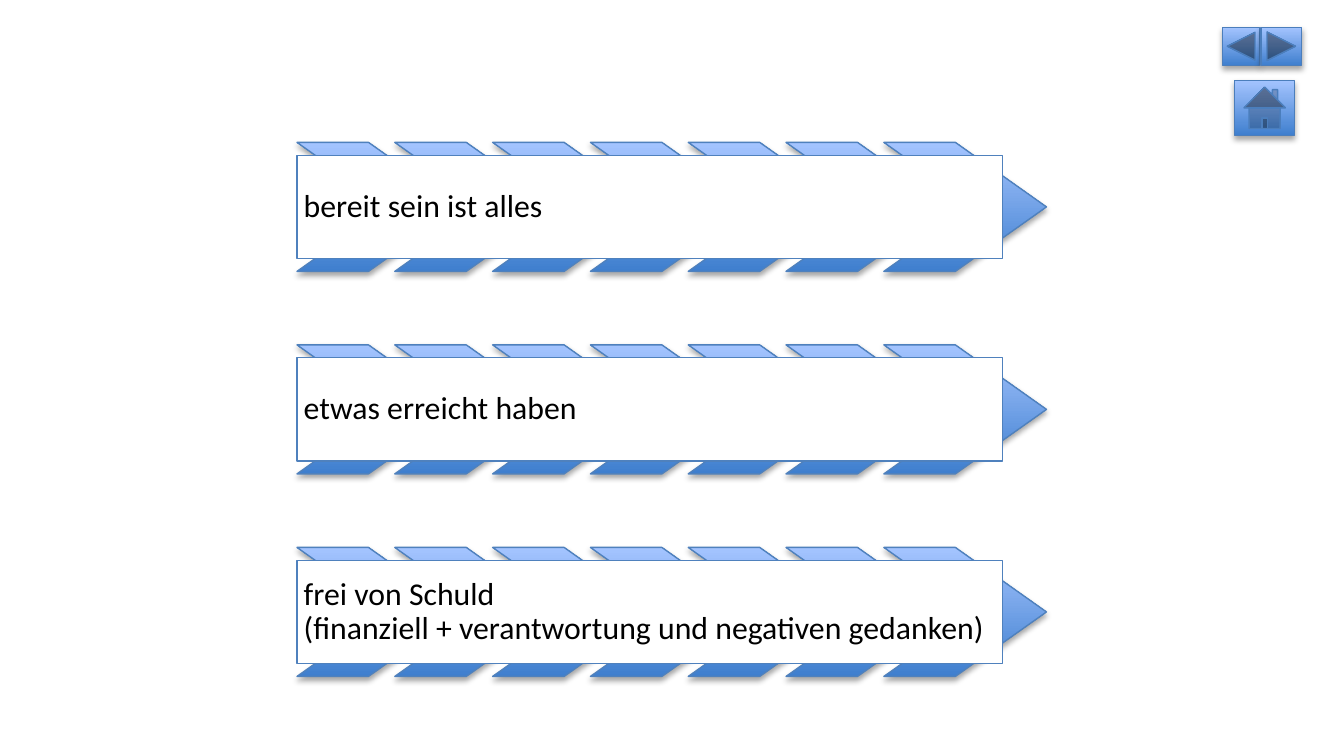
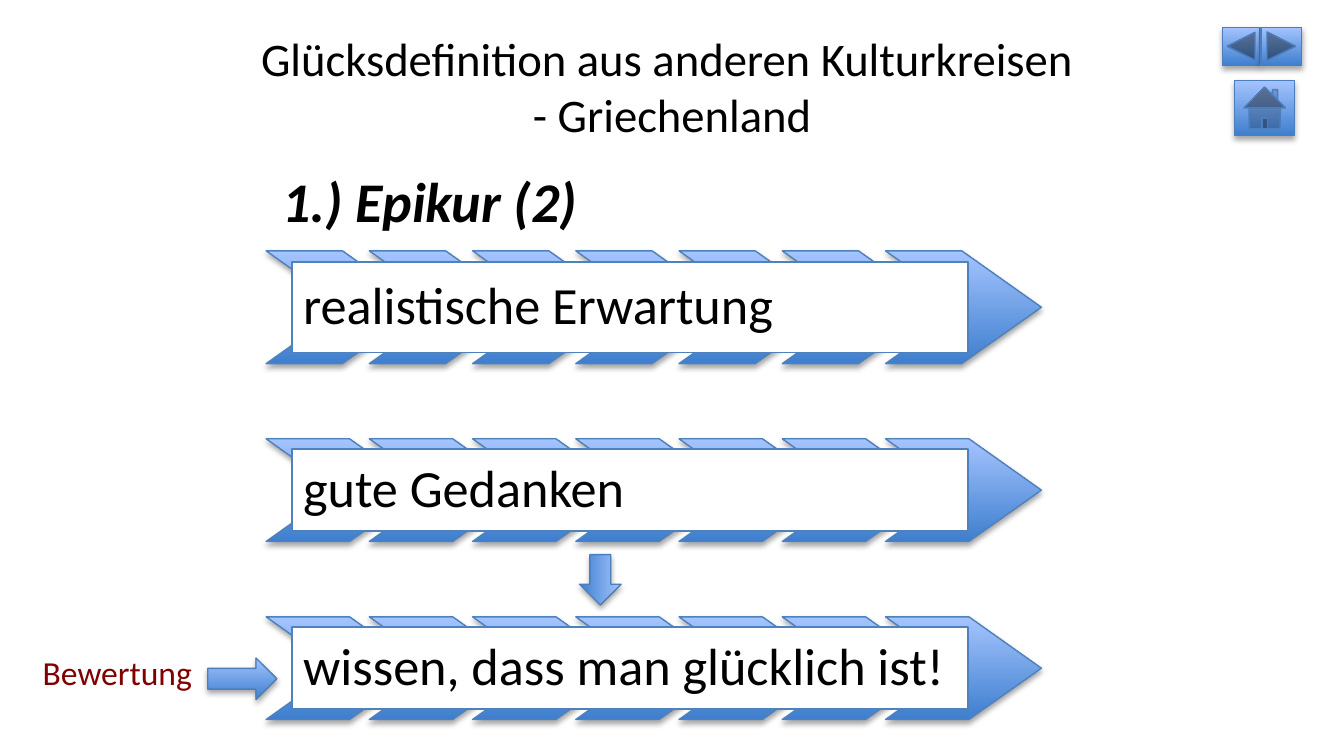
from dataclasses import dataclass

from lxml import etree
from pptx import Presentation
from pptx.dml.color import RGBColor
from pptx.enum.shapes import MSO_SHAPE
from pptx.enum.text import MSO_ANCHOR, MSO_AUTO_SIZE, PP_ALIGN
from pptx.oxml.ns import qn
from pptx.util import Pt

CHEVRON = MSO_SHAPE.CHEVRON
RECT = MSO_SHAPE.RECTANGLE
ARROW = MSO_SHAPE.RIGHT_ARROW
BACK = MSO_SHAPE.ACTION_BUTTON_BACK_OR_PREVIOUS
NEXT = MSO_SHAPE.ACTION_BUTTON_FORWARD_OR_NEXT
HOME = MSO_SHAPE.ACTION_BUTTON_HOME
MIDDLE, BOTTOM = MSO_ANCHOR.MIDDLE, MSO_ANCHOR.BOTTOM
LEFT, CENTER = PP_ALIGN.LEFT, PP_ALIGN.CENTER
NO_FIT, GROW = MSO_AUTO_SIZE.NONE, MSO_AUTO_SIZE.SHAPE_TO_FIT_TEXT

FONT = "Calibri"
COLORS = {
    "dark": "3F7FCE",
    "light": "A4C4FF",
    "edge": "4F81BD",
    "rim": "4B7EBC",
    "paper": "FFFFFF",
    "ink": "000000",
    "note": "800000",
}
COUNT = 7  # chevrons in a band
TITLE_ONLY, BLANK = 5, 6


@dataclass
class Box:
    x: float
    y: float
    w: float
    h: float

    def pts(self) -> tuple:
        return Pt(self.x), Pt(self.y), Pt(self.w), Pt(self.h)


@dataclass
class Icon:
    kind: int
    box: Box
    turn: float = 0


@dataclass
class Style:
    """Measures shared by the bands of one slide."""
    x: float
    step: float
    width: float
    box_x: float
    box_w: float
    size: float
    inset: float


@dataclass
class Band:
    text: str
    y: float
    h: float


def rgb(name: str) -> RGBColor:
    return RGBColor.from_string(COLORS[name])


def set_text(shape, text: str, size: float, color: str = "ink",
             align: int = LEFT, space: float = 1, bold: bool = False) -> None:
    """Put one paragraph in a shape and format it; bold text is also italic."""
    shape.text_frame.text = text
    para = shape.text_frame.paragraphs[0]
    para.alignment = align
    para.line_spacing = space
    for run in para.runs:
        run.font.name = FONT
        run.font.size = Pt(size)
        run.font.bold = run.font.italic = bold
        run.font.color.rgb = rgb(color)


def set_frame(shape, inset: float, anchor: int) -> None:
    frame = shape.text_frame
    frame.word_wrap = True
    frame.vertical_anchor = anchor
    frame.margin_left = frame.margin_right = Pt(inset)
    frame.margin_top = frame.margin_bottom = Pt(inset)


def add_form(slide, kind: int, box: Box, edge: str):
    shape = slide.shapes.add_shape(kind, *box.pts())
    shape.shadow.inherit = False
    shape.line.color.rgb = rgb(edge)
    shape.line.width = Pt(0.75)
    return shape


def add_glossy(slide, kind: int, box: Box, edge: str):
    """Draw a shape with the blue gradient and the soft shadow below it."""
    shape = add_form(slide, kind, box, edge)
    shape.fill.gradient()
    shape.fill.gradient_angle = 90
    for stop, name in zip(shape.fill.gradient_stops, ("dark", "light")):
        stop.color.rgb = rgb(name)
    effects = shape.element.spPr.find(qn("a:effectLst"))
    shadow = etree.SubElement(effects, qn("a:outerShdw"), blurRad=str(Pt(3.1)),
                              dist=str(Pt(1.8)), dir="5400000", rotWithShape="0")
    color = etree.SubElement(shadow, qn("a:srgbClr"), val=COLORS["ink"])
    etree.SubElement(color, qn("a:alpha"), val="35000")
    return shape


def add_icons(slide, icons: list[Icon]) -> None:
    for icon in icons:
        shape = add_glossy(slide, icon.kind, icon.box, "rim")
        shape.rotation = icon.turn


def add_band(slide, band: Band, style: Style) -> None:
    """Draw a row of chevrons with a white text box over its middle 80 %."""
    for i in range(COUNT):
        box = Box(style.x + i * style.step, band.y, style.width, band.h)
        add_glossy(slide, CHEVRON, box, "edge").adjustments[0] = 0.706
    box = Box(style.box_x, band.y + 0.1 * band.h, style.box_w, 0.8 * band.h)
    label = add_form(slide, RECT, box, "edge")
    label.fill.solid()
    label.fill.fore_color.rgb = rgb("paper")
    set_frame(label, style.inset, MIDDLE)
    set_text(label, band.text, style.size, space=0.9)


# Navigation buttons on both slides
BUTTONS = [
    Icon(BACK, Box(655, 14.6, 19.8, 20.4)),
    Icon(NEXT, Box(675.5, 14.6, 21.8, 20.4)),
    Icon(HOME, Box(661.5, 43, 32, 29.6)),
]

# Slide 1: three bands at equal distance
AIMS = Style(x=159.1, step=52.4, width=87.1, box_x=159.1, box_w=378,
             size=17, inset=3.6)
AIM_TEXTS = [
    "bereit sein ist alles",
    "etwas erreicht haben",
    "frei von Schuld\v(finanziell + verantwortung und negativen gedanken)",
]

# Slide 2: bands and block arrows
STEPS = Style(x=142.6, step=55.3, width=83.5, box_x=156.4, box_w=362.2,
              size=28, inset=6)
STEP_BANDS = [
    Band("realistische Erwartung", 134.4, 60.4),
    Band("gute Gedanken", 235.1, 55),
    Band("wissen, dass man glücklich ist!", 330.5, 55),
]
ARROWS = [
    Icon(ARROW, Box(111.3, 352.5, 37, 22.3)),
    Icon(ARROW, Box(308.1, 299.5, 27, 22.3), turn=90),
]


def build_aims(deck) -> None:
    slide = deck.slides.add_slide(deck.slide_layouts[BLANK])
    for i, text in enumerate(AIM_TEXTS):
        add_band(slide, Band(text, 76.3 + i * 108.5, 69.1), AIMS)
    add_icons(slide, BUTTONS)


def build_steps(deck) -> None:
    slide = deck.slides.add_slide(deck.slide_layouts[TITLE_ONLY])

    # Title
    title = slide.shapes.title
    title.left, title.top, title.width, title.height = Box(36, 12.2, 648, 67.7).pts()
    title.text_frame.auto_size = NO_FIT
    title.text_frame.vertical_anchor = MIDDLE
    set_text(title, "Glücksdefinition aus anderen Kulturkreisen \v- Griechenland",
             25, align=CENTER)
    add_icons(slide, BUTTONS)

    # Heading and bands
    head = slide.shapes.add_textbox(*Box(142.6, 98.6, 393.8, 35.8).pts())
    set_frame(head, 8.6, BOTTOM)
    set_text(head, "1.) Epikur (2)", 30, space=0.9, bold=True)
    for band in STEP_BANDS:
        add_band(slide, band, STEPS)

    # Side note and arrows
    note = slide.shapes.add_textbox(*Box(15.8, 345.6, 95, 29).pts())
    note.text_frame.word_wrap = False
    note.text_frame.auto_size = GROW
    set_text(note, "Bewertung", 18, color="note")
    add_icons(slide, ARROWS)


def main() -> None:
    deck = Presentation()
    deck.slide_width, deck.slide_height = Pt(720), Pt(405)
    build_aims(deck)
    build_steps(deck)
    deck.save("out.pptx")


if __name__ == "__main__":
    main()
